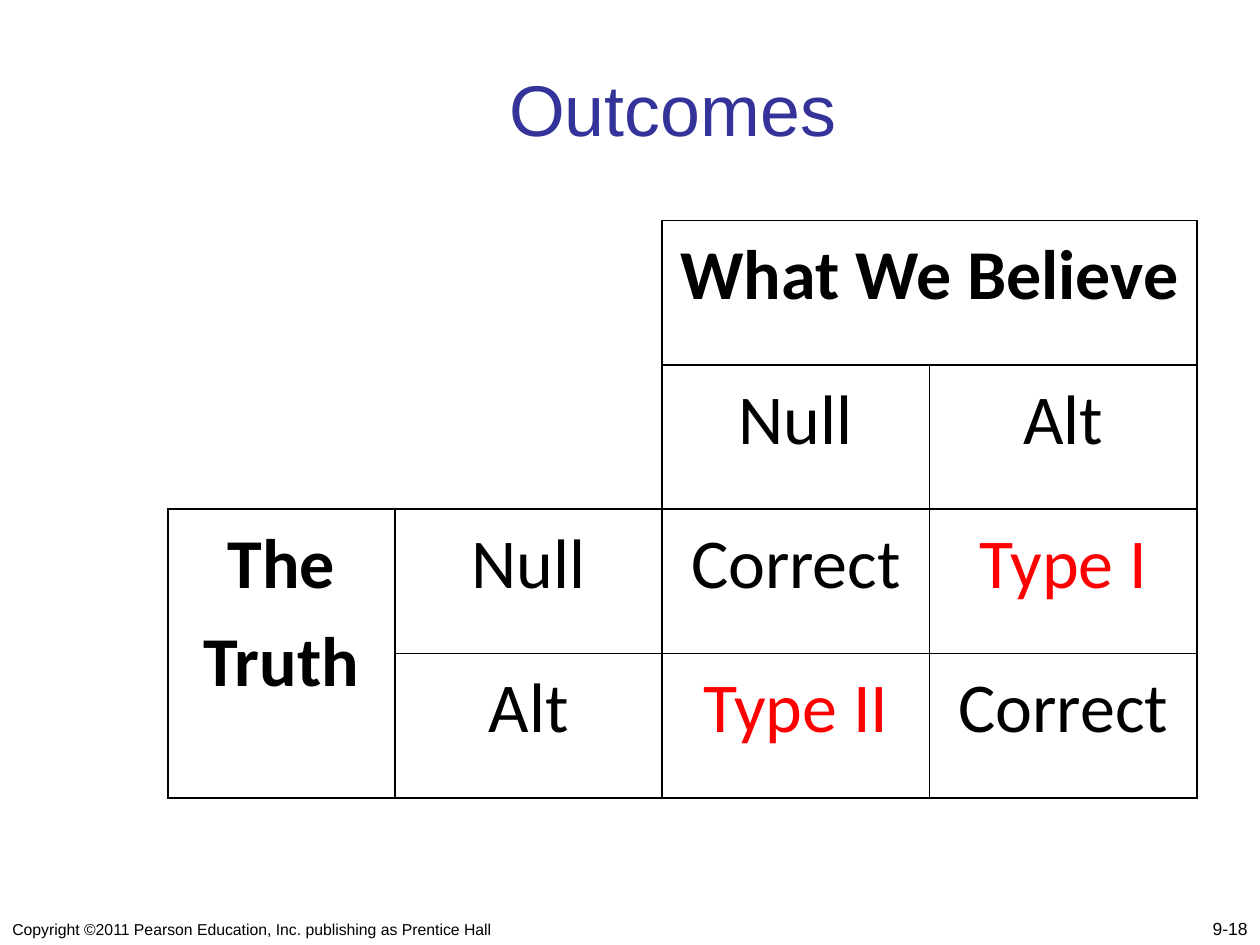
"""Build a slide with the decision outcomes table of a hypothesis test."""
from dataclasses import dataclass

from lxml import etree
from pptx import Presentation
from pptx.dml.color import RGBColor
from pptx.enum.text import MSO_ANCHOR, PP_ALIGN
from pptx.oxml.ns import qn
from pptx.util import Pt

LEFT, CENTER, RIGHT = PP_ALIGN.LEFT, PP_ALIGN.CENTER, PP_ALIGN.RIGHT
TOP, BOTTOM = MSO_ANCHOR.TOP, MSO_ANCHOR.BOTTOM


@dataclass(frozen=True)
class Theme:
    heading: str = "333399"
    ink: str = "000000"
    error: str = "FF0000"
    slide_font: str = "Arial"
    table_font: str = "Calibri"
    title_size: float = 41
    table_size: float = 40
    footer_size: float = 9
    number_size: float = 10
    border: float = 1


THEME = Theme()
OUTCOMES = [
    ["", "", "What We Believe", ""],
    ["", "", "Null", "Alt"],
    ["The\nTruth", "Null", "Correct", "Type I"],
    ["", "Alt", "Type II", "Correct"],
]
HEADINGS = {"What We Believe", "The\nTruth"}
ERRORS = {"Type I", "Type II"}
CORNER_EDGES = {(0, 0): "", (0, 1): "R", (1, 0): "B", (1, 1): "RB"}


def style(paragraph, font_name, size, color, align, bold=False):
    paragraph.alignment = align
    font = paragraph.font
    font.name, font.size, font.bold = font_name, Pt(size), bold
    font.color.rgb = RGBColor.from_string(color)


def add_label(slide, text, box, size, color, align):
    frame = slide.shapes.add_textbox(*map(Pt, box)).text_frame
    frame.word_wrap = True
    frame.vertical_anchor = BOTTOM
    frame.text = text
    style(frame.paragraphs[0], THEME.slide_font, size, color, align)


def set_borders(cell, edges):
    properties = cell._tc.get_or_add_tcPr()
    for edge in "LRTB":
        line = etree.SubElement(properties, qn(f"a:ln{edge}"), w=str(Pt(THEME.border)))
        if edge in edges:
            fill = etree.SubElement(line, qn("a:solidFill"))
            etree.SubElement(fill, qn("a:srgbClr"), val=THEME.ink)
        else:
            etree.SubElement(line, qn("a:noFill"))


def fill_cell(cell, text, edges):
    cell.margin_left = cell.margin_right = Pt(5.4)
    cell.margin_top = cell.margin_bottom = 0
    cell.vertical_anchor = TOP
    set_borders(cell, edges)
    cell.fill.background()
    if not text:
        return
    cell.text = text
    color = THEME.error if text in ERRORS else THEME.ink
    for paragraph in cell.text_frame.paragraphs:
        paragraph.line_spacing = 1.15
        style(paragraph, THEME.table_font, THEME.table_size, color, CENTER, text in HEADINGS)


def add_outcomes(slide):
    table = slide.shapes.add_table(4, 4, Pt(96), Pt(126), Pt(588), Pt(330)).table
    table.first_row = table.horz_banding = False
    for column, width in zip(table.columns, [129.6] + [152.8] * 3):
        column.width = Pt(width)
    for row in table.rows:
        row.height = Pt(82.5)
    table.cell(0, 2).merge(table.cell(0, 3))
    table.cell(2, 0).merge(table.cell(3, 0))
    for r, texts in enumerate(OUTCOMES):
        for c, text in enumerate(texts):
            fill_cell(table.cell(r, c), text, CORNER_EDGES.get((r, c), "LRTB"))


def main():
    deck = Presentation()
    deck.slide_width, deck.slide_height = Pt(720), Pt(540)
    slide = deck.slides.add_slide(deck.slide_layouts[6])
    add_label(slide, "Outcomes", (78, 30, 613, 60), THEME.title_size, THEME.heading, CENTER)
    add_label(slide, "Copyright ©2011 Pearson Education, Inc. publishing as Prentice Hall",
              (0, 516, 366, 24), THEME.footer_size, THEME.ink, LEFT)
    add_label(slide, "9-18", (570, 515.5, 150, 24.5), THEME.number_size, THEME.ink, RIGHT)
    add_outcomes(slide)
    deck.save("out.pptx")


if __name__ == "__main__":
    main()
